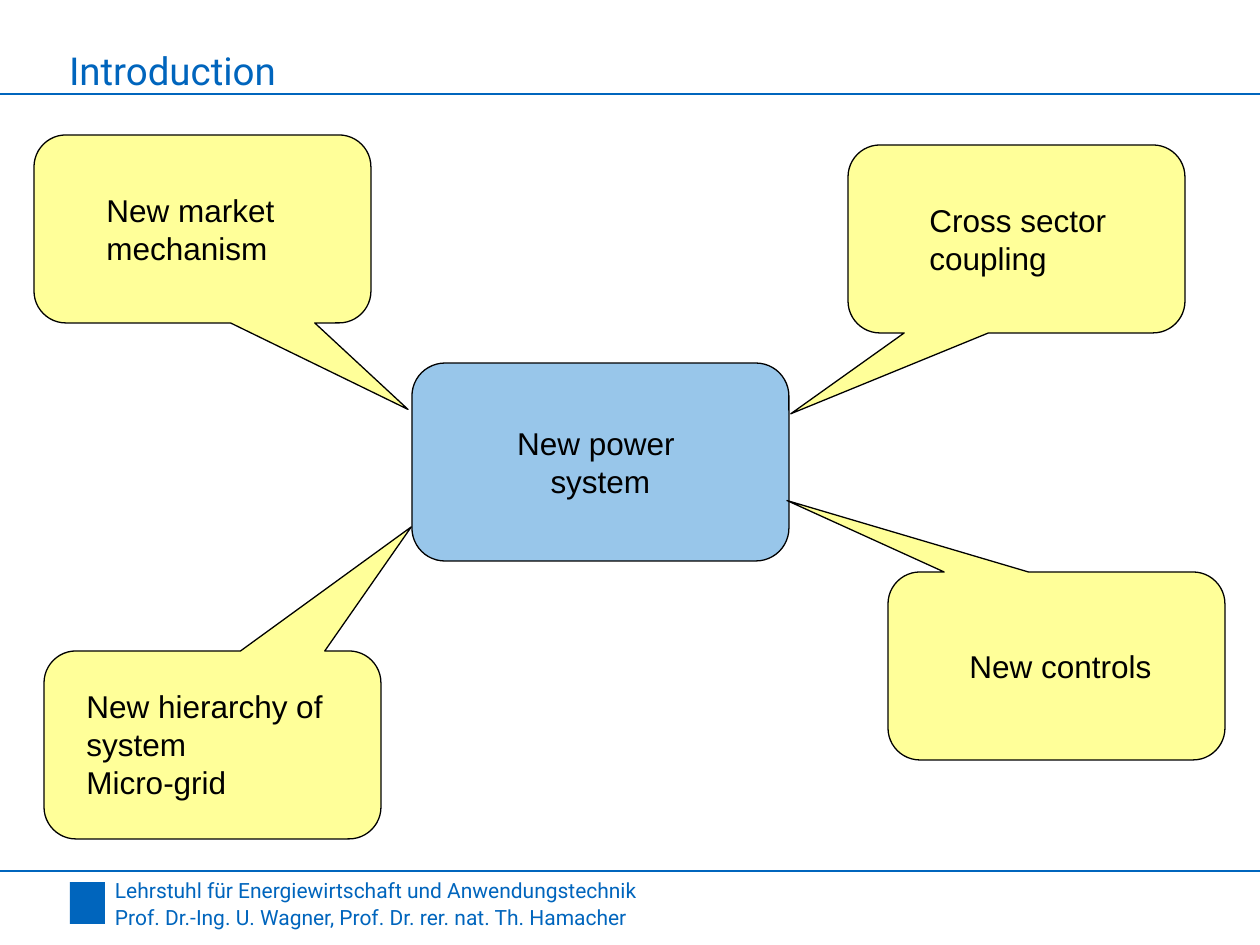
from lxml import etree
from pptx import Presentation
from pptx import util as u
from pptx.dml.color import RGBColor
from pptx.enum import shapes, text
from pptx.oxml import ns

PX = 914400 / 126  # EMU per pixel
WIDTH, HEIGHT = 1260, 945


def px(*lengths):
    return [u.Emu(round(length * PX)) for length in lengths]


def color(value):
    return RGBColor.from_string(value)


class SlideBuilder:
    BLUE, SKY, YELLOW, BLACK = "0065BD", "98C6EA", "FFFF99", "000000"
    HEADING_FONT, BODY_FONT = "Roboto", "Arial"

    def __init__(self, slide):
        self.slide = slide

    def fill_text(self, frame, lines, font, size, ink, anchor,
                  align=text.PP_ALIGN.LEFT, spacing=None, wrap=False, margins=None):
        frame.word_wrap = wrap
        frame.vertical_anchor = anchor
        if margins is not None:
            frame.margin_left = frame.margin_right = u.Pt(margins)
            frame.margin_top = frame.margin_bottom = u.Pt(margins)
        for index, line in enumerate(lines):
            paragraph = frame.add_paragraph() if index else frame.paragraphs[0]
            paragraph.alignment = align
            if spacing:
                paragraph.line_spacing = spacing
            run = paragraph.add_run()
            run.text = line
            run.font.name = font
            run.font.size = u.Pt(size)
            run.font.color.rgb = color(ink)

    def title(self, words, *box):
        shape = self.slide.shapes.title
        shape.left, shape.top, shape.width, shape.height = px(*box)
        self.fill_text(shape.text_frame, [words], self.HEADING_FONT, 22, self.BLUE,
                       text.MSO_ANCHOR.BOTTOM, wrap=True, margins=0)

    def footer(self, lines, *box):
        shape = self.slide.shapes.add_textbox(*px(*box))
        self.fill_text(shape.text_frame, lines, self.HEADING_FONT, 12, self.BLUE,
                       text.MSO_ANCHOR.BOTTOM, spacing=1.1, wrap=True, margins=0)

    def rule(self, y):
        line = self.slide.shapes.add_connector(
            shapes.MSO_CONNECTOR.STRAIGHT, *px(0, y, WIDTH, y))
        line.line.color.rgb = color(self.BLUE)
        line.line.width = u.Pt(0.75)
        etree.SubElement(line._element.spPr, ns.qn("a:effectLst"))

    def box(self, kind, fill, *box, outline=True):
        shape = self.slide.shapes.add_shape(kind, *px(*box))
        shape.shadow.inherit = False
        shape.fill.solid()
        shape.fill.fore_color.rgb = color(fill)
        if outline:
            shape.line.color.rgb = color(self.BLACK)
            shape.line.width = u.Pt(0.75)
        else:
            shape.line.fill.background()
        return shape

    def center(self, lines, *box):
        shape = self.box(shapes.MSO_SHAPE.FLOWCHART_ALTERNATE_PROCESS, self.SKY, *box)
        self.fill_text(shape.text_frame, lines, self.BODY_FONT, 18, self.BLACK,
                       text.MSO_ANCHOR.MIDDLE, align=text.PP_ALIGN.CENTER)

    def callout(self, lines, corner, tip, label):
        """Callout at corner, its tip relative to its size, and its label."""
        shape = self.box(shapes.MSO_SHAPE.ROUNDED_RECTANGULAR_CALLOUT,
                         self.YELLOW, *corner, 337, 188)
        for index, value in enumerate((*tip, 0.17)):
            shape.adjustments[index] = value
        label_box = self.slide.shapes.add_textbox(*px(*label))
        self.fill_text(label_box.text_frame, lines, self.BODY_FONT, 18, self.BLACK,
                       text.MSO_ANCHOR.TOP)
        label_box.text_frame.auto_size = text.MSO_AUTO_SIZE.SHAPE_TO_FIT_TEXT


def main():
    presentation = Presentation()
    presentation.slide_width, presentation.slide_height = px(WIDTH, HEIGHT)
    layout = presentation.slide_layouts.get_by_name("Title Only")
    builder = SlideBuilder(presentation.slides.add_slide(layout))

    # Frame: footer, rules, institute mark and title
    builder.footer(["Lehrstuhl für Energiewirtschaft und Anwendungstechnik",
                    "Prof. Dr.-Ing. U. Wagner, Prof. Dr. rer. nat. Th. Hamacher"],
                   115, 875, 588, 55)
    for y in (94, 871):
        builder.rule(y)
    builder.box(shapes.MSO_SHAPE.RECTANGLE, builder.BLUE, 70, 882, 35, 42, outline=False)
    builder.title("Introduction", 69, 9, 1022, 84)

    # Central topic
    builder.center(["New power ", "system"], 412, 363, 377, 198)

    # Callouts pointing at the centre
    callouts = [
        (["Cross sector", "coupling"], (848, 145), (-0.67, 0.93), (917, 195, 202, 88)),
        (["New controls"], (888, 572), (-0.8, -0.88), (957, 641, 208, 50)),
        (["New market", "mechanism"], (34, 135), (0.61, 0.96), (94, 185, 193, 88)),
        (["New hierarchy of", "system", "Micro-grid"], (44, 651), (0.59, -1.16),
         (74, 681, 262, 126)),
    ]
    for callout in callouts:
        builder.callout(*callout)

    presentation.save("out.pptx")


if __name__ == "__main__":
    main()
